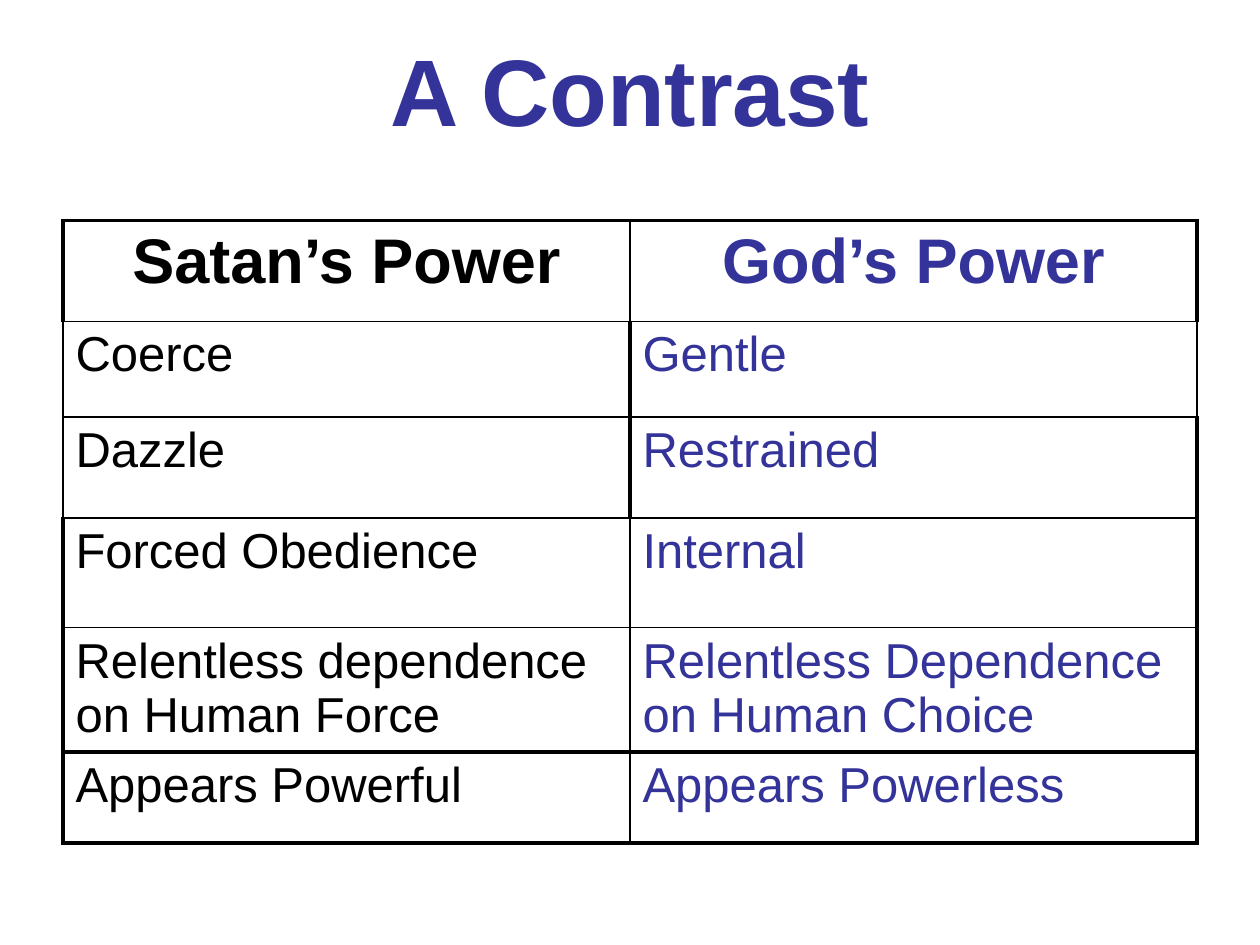
from dataclasses import dataclass

from lxml import etree
from pptx import Presentation
from pptx.dml.color import RGBColor
from pptx.enum.text import MSO_ANCHOR, PP_ALIGN
from pptx.oxml.ns import qn
from pptx.util import Inches, Pt

CENTER, LEFT = PP_ALIGN.CENTER, PP_ALIGN.LEFT
MIDDLE, TOP = MSO_ANCHOR.MIDDLE, MSO_ANCHOR.TOP
TITLE_ONLY_LAYOUT = 5


@dataclass(frozen=True)
class Theme:
    font: str = "Arial"
    black: RGBColor = RGBColor(0x00, 0x00, 0x00)
    blue: RGBColor = RGBColor(0x33, 0x33, 0x99)
    white: RGBColor = RGBColor(0xFF, 0xFF, 0xFF)
    title_size: int = 54
    header_size: int = 36
    body_size: int = 28
    thin: float = 1
    thick: float = 2.25


THEME = Theme()
THIN, THICK = THEME.thin, THEME.thick

CONTRASTS = [
    ("Satan’s Power", "God’s Power"),
    ("Coerce", "Gentle"),
    ("Dazzle", "Restrained"),
    ("Forced Obedience", "Internal"),
    ("Relentless dependence on Human Force", "Relentless Dependence on Human Choice"),
    ("Appears Powerful", "Appears Powerless"),
]
COLUMN_COLORS = (THEME.black, THEME.blue)
COLUMN_WIDTH = 4.5
ROW_HEIGHTS = [0.8, 0.76, 0.8, 0.87, 0.99, 0.72]

# Rules from top to bottom, then the left, middle and right rule of each row.
HORIZONTAL_RULES = [THICK, THIN, THIN, THIN, THIN, THICK, THICK]
FRAMED_ROW = (THICK, THIN, THICK)
VERTICAL_RULES = [FRAMED_ROW, (THIN, THICK, THIN), (THIN, THICK, THICK)] + [FRAMED_ROW] * 3


def write_text(text_frame, text, *, size, color, bold=False, align=LEFT):
    paragraph = text_frame.paragraphs[0]
    paragraph.alignment = align
    run = paragraph.add_run()
    run.text = text
    run.font.name = THEME.font
    run.font.size = Pt(size)
    run.font.bold = bold
    run.font.color.rgb = color


def set_borders(cell, **widths):
    """Draw black cell borders; the keywords L, R, T and B give widths in points."""
    properties = cell._tc.get_or_add_tcPr()
    for index, side in enumerate("LRTB"):
        line = etree.Element(qn(f"a:ln{side}"), w=str(Pt(widths[side])))
        fill = etree.SubElement(line, qn("a:solidFill"))
        etree.SubElement(fill, qn("a:srgbClr"), val=str(THEME.black))
        properties.insert(index, line)


def add_title(slide, text):
    title = slide.shapes.title
    title.left, title.top = Inches(0.5), Inches(0.08)
    title.width, title.height = Inches(9), Inches(1.25)
    title.text_frame.vertical_anchor = MIDDLE
    write_text(title.text_frame, text, size=THEME.title_size,
               color=THEME.blue, bold=True, align=CENTER)


def format_cell(cell, text, row, column):
    is_header = row == 0
    cell.fill.solid()
    cell.fill.fore_color.rgb = THEME.white
    cell.vertical_anchor = TOP
    write_text(cell.text_frame, text, color=COLUMN_COLORS[column], bold=is_header,
               size=THEME.header_size if is_header else THEME.body_size,
               align=CENTER if is_header else LEFT)
    set_borders(cell, L=VERTICAL_RULES[row][column], R=VERTICAL_RULES[row][column + 1],
                T=HORIZONTAL_RULES[row], B=HORIZONTAL_RULES[row + 1])


def add_contrast_table(slide):
    column_count = len(COLUMN_COLORS)
    table = slide.shapes.add_table(
        len(CONTRASTS), column_count, Inches(0.5), Inches(1.75),
        Inches(COLUMN_WIDTH * column_count), Inches(sum(ROW_HEIGHTS))).table
    table.first_row = table.horz_banding = False
    for column in table.columns:
        column.width = Inches(COLUMN_WIDTH)
    for row, (height, texts) in enumerate(zip(ROW_HEIGHTS, CONTRASTS)):
        table.rows[row].height = Inches(height)
        for column, text in enumerate(texts):
            format_cell(table.cell(row, column), text, row, column)


def main():
    presentation = Presentation()
    presentation.slide_width, presentation.slide_height = Inches(10), Inches(7.5)
    slide = presentation.slides.add_slide(presentation.slide_layouts[TITLE_ONLY_LAYOUT])
    add_title(slide, "A Contrast")
    add_contrast_table(slide)
    presentation.save("out.pptx")


if __name__ == "__main__":
    main()
